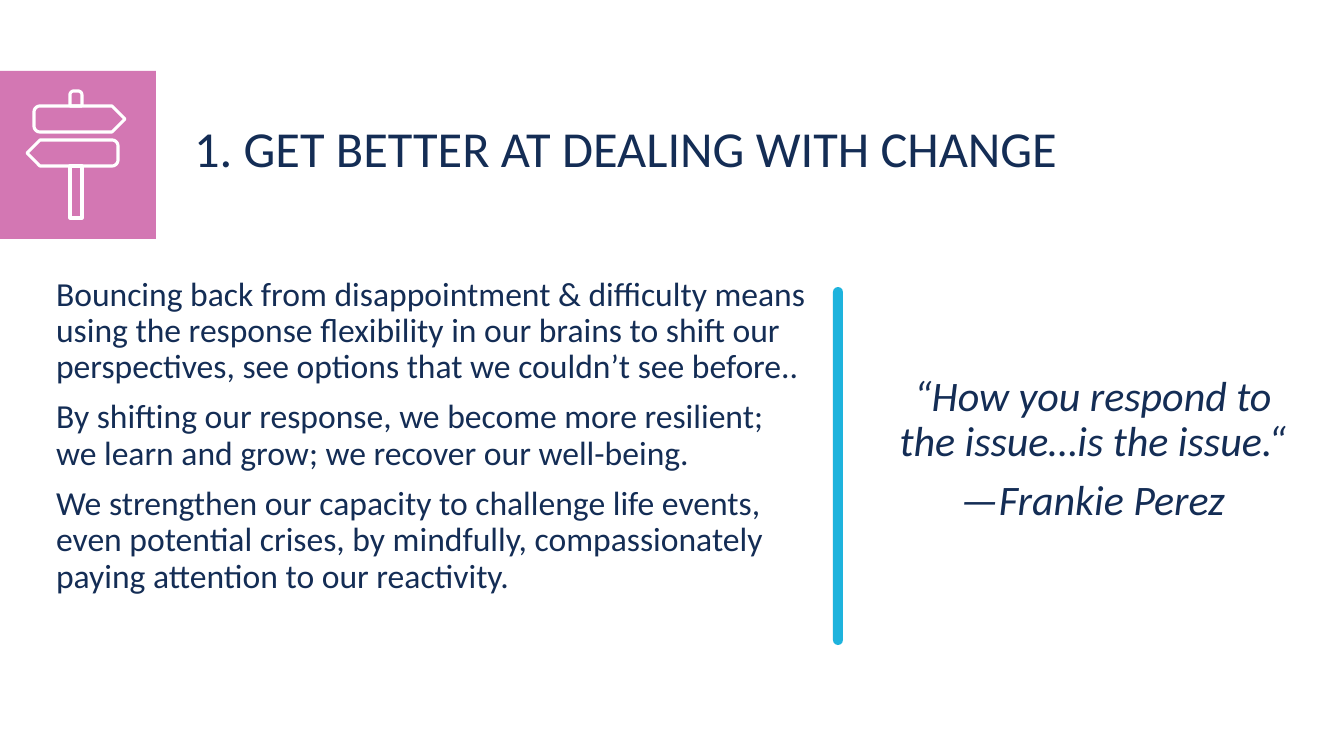
import math
from lxml import etree
from pptx import Presentation
from pptx import util as u
from pptx.dml.color import RGBColor
from pptx.enum import shapes, text
from pptx.oxml.ns import qn

# Content
TITLE = "1. GET BETTER AT DEALING WITH CHANGE"
BODY = [
    "Bouncing back from disappointment & difficulty means using the response flexibility in our brains "
    "to shift our perspectives, see options that we couldn’t see before..",
    "By shifting our response, we become more resilient; we learn and grow; we recover our well-being.",
    "We strengthen our capacity to challenge life events, even potential crises, by mindfully, "
    "compassionately paying attention to our reactivity.",
]
QUOTE = ["“How you respond to the issue…is the issue.“ ", "—Frankie Perez"]
COLORS = {"navy": "142D55", "pink": "C54A9A", "cyan": "1EB3DD", "white": "FFFFFF"}
FONT = "Calibri"

# Signpost outlines: corners as (x, y, radius) in px
SIGNPOST = [
    [(34, 106, 6), (112, 106, 0), (125, 119, 0), (112, 132, 0), (34, 132, 6)],
    [(118, 140, 6), (40, 140, 0), (27, 153, 0), (40, 166, 0), (118, 166, 6)],
    [(70, 106, 0), (70, 91, 4), (82, 91, 4), (82, 106, 0)],
    [(70, 166, 0), (70, 218, 0), (82, 218, 0), (82, 166, 0)],
]
ARC_STEPS = 8


def px(length):
    return u.Emu(round(length * 914400 / 100.8))


def color(name):
    return RGBColor.from_string(COLORS[name])


def fill_placeholder(shape, box, lines, size, align=text.PP_ALIGN.LEFT,
                     anchor=text.MSO_ANCHOR.TOP, italic=False):
    shape.left, shape.top, shape.width, shape.height = map(px, box)
    frame = shape.text_frame
    frame.word_wrap = True
    frame.auto_size = text.MSO_AUTO_SIZE.NONE
    frame.vertical_anchor = anchor
    for index, line in enumerate(lines):
        paragraph = frame.paragraphs[0] if index == 0 else frame.add_paragraph()
        paragraph.text = line
        properties = paragraph._p.get_or_add_pPr()
        properties.set("marL", "0")
        properties.set("indent", "0")
        etree.SubElement(properties, qn("a:buNone"))
        paragraph.alignment = align
        paragraph.line_spacing = 0.9
        paragraph.space_before = u.Pt(10 if index else 0)
        font = paragraph.font
        font.name, font.size, font.italic = FONT, u.Pt(size), italic
        font.color.rgb = color("navy")
    return frame


def add_block(kind, box, fill):
    shape = slide.shapes.add_shape(kind, *map(px, box))
    shape.shadow.inherit = False
    shape.fill.solid()
    shape.fill.fore_color.rgb = color(fill)
    shape.line.fill.background()
    return shape


def rounded_outline(corners):
    """Replace each corner that has a radius by points along a curve."""
    points = []
    for index, (x, y, radius) in enumerate(corners):
        if not radius:
            points.append((x, y))
            continue
        ends = []
        for other in (corners[index - 1], corners[(index + 1) % len(corners)]):
            share = radius / math.dist((x, y), other[:2])
            ends.append((x + (other[0] - x) * share, y + (other[1] - y) * share))
        (x1, y1), (x2, y2) = ends
        for step in range(ARC_STEPS + 1):
            angle = math.pi / 2 * step / ARC_STEPS
            a, b = 1 - math.sin(angle), 1 - math.cos(angle)
            points.append((x + (x1 - x) * a + (x2 - x) * b,
                           y + (y1 - y) * a + (y2 - y) * b))
    return [(px(x), px(y)) for x, y in points]


presentation = Presentation()
presentation.slide_width, presentation.slide_height = px(1344), px(756)
slide = presentation.slides.add_slide(presentation.slide_layouts[3])
title, body, quote = slide.placeholders

# Icon tile and divider
tile = add_block(shapes.MSO_SHAPE.RECTANGLE, (0, 71, 156, 168), "pink")
tile_color = tile.fill._xPr.find(qn("a:solidFill"))[0]
etree.SubElement(tile_color, qn("a:alpha"), val="75000")
divider = add_block(shapes.MSO_SHAPE.ROUNDED_RECTANGLE, (833, 287, 10, 358), "cyan")
divider.adjustments[0] = 0.5

# Title, body and quote
fill_placeholder(title, (184, 119, 930, 77), [TITLE], 36)
fill_placeholder(body, (46, 272, 772, 387), BODY, 24)
quote_frame = fill_placeholder(quote, (889, 287, 408, 358), QUOTE, 30,
                               text.PP_ALIGN.CENTER, text.MSO_ANCHOR.MIDDLE, True)
quote_frame.margin_bottom = px(37)

# Signpost icon
signpost = slide.shapes.add_group_shape()
for corners in SIGNPOST:
    start, *rest = rounded_outline(corners)
    builder = signpost.shapes.build_freeform(*start)
    builder.add_line_segments(rest, close=True)
    part = builder.convert_to_shape()
    part.shadow.inherit = False
    part.fill.background()
    part.line.color.rgb = color("white")
    part.line.width = u.Pt(2.25)

presentation.save("out.pptx")
